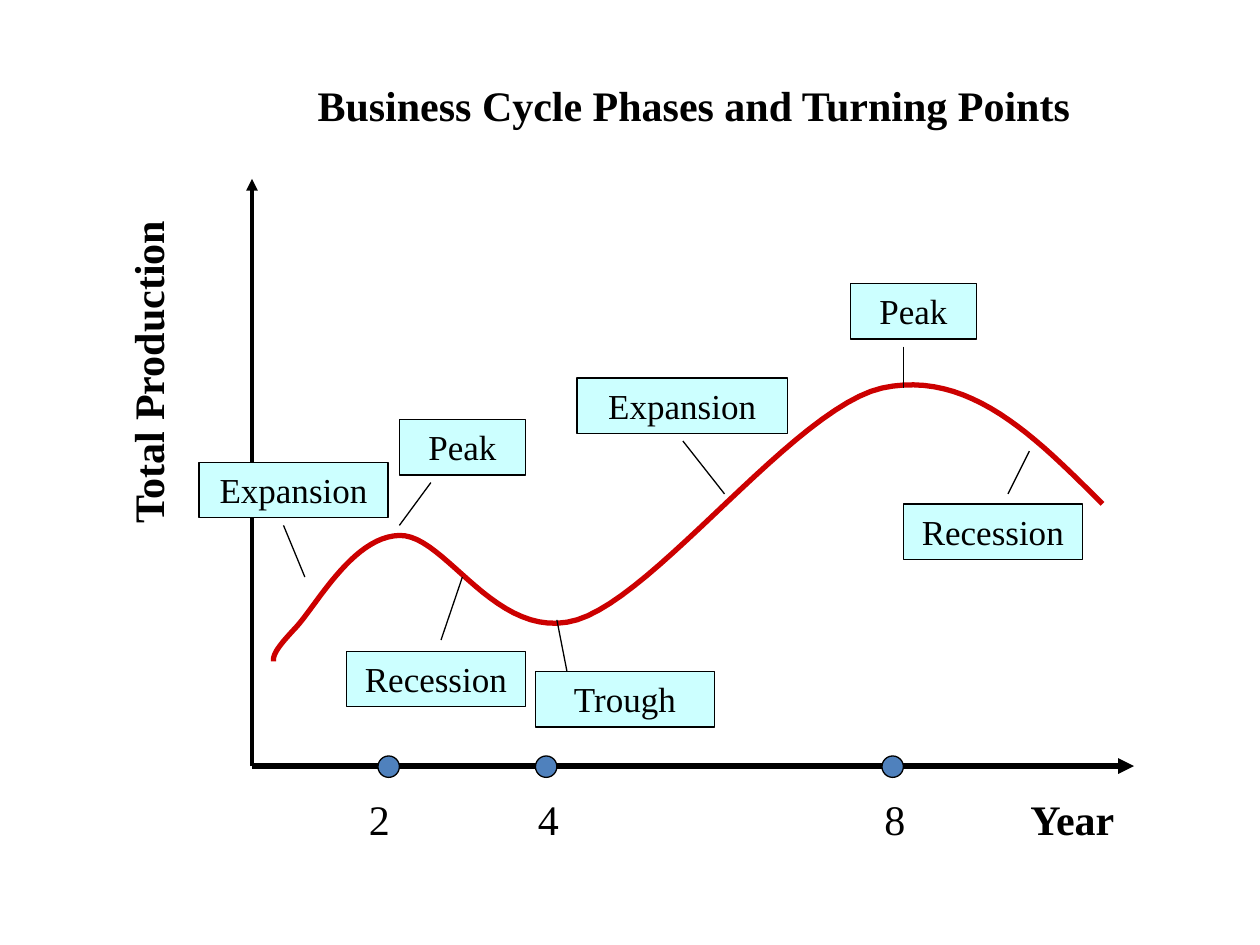
"""Build a slide showing business cycle phases and turning points."""
import pptx
import pptx.dml.color
import pptx.enum.shapes
import pptx.enum.text
import pptx.oxml
import pptx.oxml.ns
import pptx.util
from pptx.util import Inches

BLACK = pptx.dml.color.RGBColor(0x00, 0x00, 0x00)
RED = pptx.dml.color.RGBColor(0xCC, 0x00, 0x00)
BLUE = pptx.dml.color.RGBColor(0x4F, 0x81, 0xBD)
PALE_CYAN = pptx.dml.color.RGBColor(0xCC, 0xFF, 0xFF)
SHAPE_TYPE = pptx.enum.shapes.MSO_SHAPE
ALIGN = pptx.enum.text.PP_ALIGN


def write_text(shape, text, size, bold=False, alignment=ALIGN.LEFT):
    frame = shape.text_frame
    frame.text = text
    frame.word_wrap = True
    frame.auto_size = pptx.enum.text.MSO_AUTO_SIZE.NONE
    frame.vertical_anchor = pptx.enum.text.MSO_ANCHOR.TOP
    paragraph = frame.paragraphs[0]
    paragraph.alignment = alignment
    font = paragraph.runs[0].font
    font.name = "Times New Roman"
    font.size = pptx.util.Pt(size)
    font.bold = bold
    font.color.rgb = BLACK


def draw_line(slide, start, end, width, arrow=False):
    connector = slide.shapes.add_connector(
        pptx.enum.shapes.MSO_CONNECTOR.STRAIGHT, *map(Inches, start + end))
    connector.line.color.rgb = BLACK
    connector.line.width = pptx.util.Pt(width)
    properties = connector._element.spPr
    if arrow:
        tail = pptx.oxml.parse_xml(f'<a:tailEnd {pptx.oxml.ns.nsdecls("a")} type="triangle"/>')
        properties.find(pptx.oxml.ns.qn("a:ln")).append(tail)
    properties.append(pptx.oxml.parse_xml(f'<a:effectLst {pptx.oxml.ns.nsdecls("a")}/>'))


presentation = pptx.Presentation()
presentation.slide_width = Inches(10)
presentation.slide_height = Inches(7.5)
slide = presentation.slides.add_slide(presentation.slide_layouts[5])

title = slide.shapes.title
title.left, title.top, title.width, title.height = map(Inches, (2.42, 0.58, 6.5, 0.5))
write_text(title, "Business Cycle Phases and Turning Points", 24, bold=True)

origin = (2, 6.08)
draw_line(slide, origin, (2, 1.42), 2.25, arrow=True)
draw_line(slide, origin, (9, 6.08), 3, arrow=True)

curve_start = (2.17, 5.25)
curve_segments = [
    ((2.17, 5.21), (2.17, 5.17), (2.33, 5)),
    ((2.5, 4.83), (2.79, 4.26), (3.17, 4.25)),
    ((3.54, 4.24), (3.94, 5.11), (4.58, 4.92)),
    ((5.22, 4.72), (6.31, 3.24), (7, 3.08)),
    ((7.69, 2.93), (8.22, 3.47), (8.75, 4)),
]
steps = 24
curve_points = []
segment_start = curve_start
for first_control, second_control, segment_end in curve_segments:
    for step in range(1, steps + 1):
        t = step / steps
        weights = ((1 - t) ** 3, 3 * t * (1 - t) ** 2, 3 * t ** 2 * (1 - t), t ** 3)
        anchors = (segment_start, first_control, second_control, segment_end)
        curve_points.append(tuple(
            Inches(sum(weight * anchor[axis] for weight, anchor in zip(weights, anchors)))
            for axis in (0, 1)))
    segment_start = segment_end
builder = slide.shapes.build_freeform(*map(Inches, curve_start))
builder.add_line_segments(curve_points, close=False)
curve = builder.convert_to_shape()
curve.shadow.inherit = False
curve.fill.background()
curve.line.color.rgb = RED
curve.line.width = pptx.util.Pt(3)

for text, left, top, width, rotation, bold in [
    ("Total Production", -0.58, 2.25, 3.5, 270, True),
    ("Year", 8.08, 6.25, 1.5, 0, True),
    ("2", 2.83, 6.25, 1, 0, False),
    ("4", 4.17, 6.25, 0.58, 0, False),
    ("8", 6.92, 6.25, 0.58, 0, False),
]:
    text_box = slide.shapes.add_textbox(*map(Inches, (left, top, width, 0.5)))
    text_box.rotation = rotation
    write_text(text_box, text, 24, bold)

markers = [(SHAPE_TYPE.OVAL, BLUE, "", left, 6, 0.17, 0.17) for left in (3, 4.25, 7)]
labels = [
    (SHAPE_TYPE.RECTANGLE, PALE_CYAN, text, left, top, width, 0.44)
    for text, left, top, width in [
        ("Expansion", 1.58, 3.67, 1.5),
        ("Expansion", 4.58, 3, 1.67),
        ("Peak", 3.17, 3.33, 1),
        ("Peak", 6.75, 2.25, 1),
        ("Recession", 2.75, 5.17, 1.42),
        ("Recession", 7.17, 4, 1.42),
        ("Trough", 4.25, 5.33, 1.42),
    ]
]
for shape_type, color, text, *bounds in markers + labels:
    shape = slide.shapes.add_shape(shape_type, *map(Inches, bounds))
    shape.shadow.inherit = False
    shape.fill.solid()
    shape.fill.fore_color.rgb = color
    shape.line.color.rgb = BLACK
    shape.line.width = pptx.util.Pt(0.75)
    if text:
        write_text(shape, text, 20, alignment=ALIGN.CENTER)

for start, end in [
    ((2.25, 4.17), (2.42, 4.58)),
    ((5.42, 3.5), (5.75, 3.92)),
    ((7.17, 2.75), (7.17, 3.08)),
    ((3.42, 3.83), (3.17, 4.17)),
    ((3.67, 4.58), (3.5, 5.08)),
    ((8.17, 3.58), (8, 3.92)),
    ((4.5, 5.33), (4.42, 4.92)),
]:
    draw_line(slide, start, end, 0.75)

presentation.save("out.pptx")
